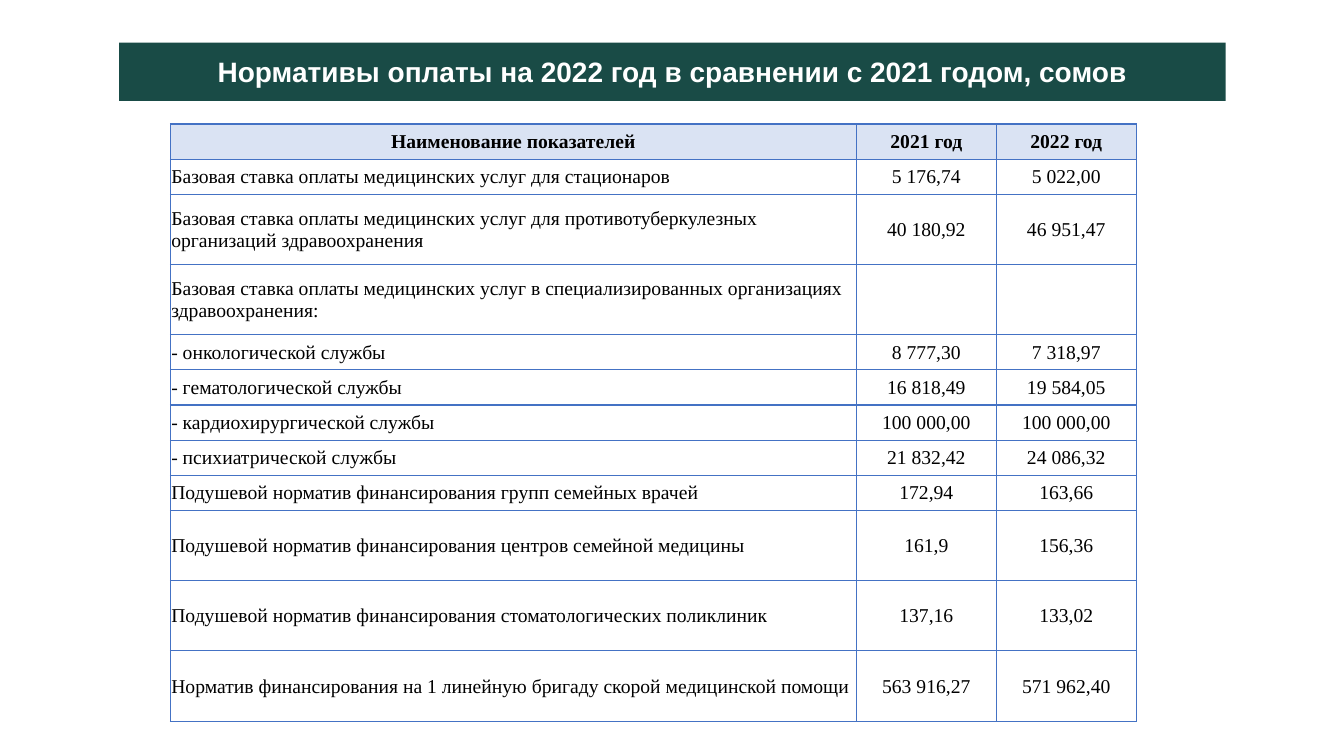
"""Build a slide comparing the 2021 and 2022 payment rates in a table."""
from lxml.etree import SubElement
from pptx import Presentation
from pptx.dml.color import RGBColor
from pptx.enum.text import MSO_ANCHOR as Anchor, MSO_AUTO_SIZE as AutoSize, PP_ALIGN as Align
from pptx.oxml.ns import qn
from pptx.util import Pt

TITLE = "Нормативы оплаты на 2022 год в сравнении с 2021 годом, сомов"
RATES = [
    ("Наименование показателей", "2021 год", "2022 год"),
    ("Базовая ставка оплаты медицинских услуг для стационаров", "5 176,74", "5 022,00"),
    ("Базовая ставка оплаты медицинских услуг для противотуберкулезных "
     "организаций здравоохранения", "40 180,92", "46 951,47"),
    ("Базовая ставка оплаты медицинских услуг в специализированных "
     "организациях здравоохранения:", "", ""),
    ("- онкологической службы", "8 777,30", "7 318,97"),
    ("- гематологической службы", "16 818,49", "19 584,05"),
    ("- кардиохирургической службы", "100 000,00", "100 000,00"),
    ("- психиатрической службы", "21 832,42", "24 086,32"),
    ("Подушевой норматив финансирования групп семейных врачей", "172,94", "163,66"),
    ("Подушевой норматив финансирования центров семейной медицины", "161,9", "156,36"),
    ("Подушевой норматив финансирования стоматологических поликлиник", "137,16", "133,02"),
    ("Норматив финансирования на 1 линейную бригаду скорой медицинской помощи",
     "563 916,27", "571 962,40"),
]
DOUBLE_ROWS = {2, 3, 9, 10, 11}
ROW_HEIGHT = 25.1
COLUMN_WIDTHS = (490, 100, 100)
TABLE_LEFT, TABLE_TOP = 121.7, 88.6

GREEN = RGBColor(0x19, 0x4B, 0x46)
PALE_BLUE = RGBColor(0xDA, 0xE3, 0xF3)
BLUE = RGBColor(0x44, 0x72, 0xC4)
WHITE = RGBColor(0xFF, 0xFF, 0xFF)
BLACK = RGBColor(0, 0, 0)


def style_font(paragraph, name, size, color, bold):
    font = paragraph.font
    font.name, font.size, font.bold = name, Pt(size), bold
    font.color.rgb = color


def add_borders(cell):
    properties = cell._tc.get_or_add_tcPr()
    for side in ("a:lnL", "a:lnR", "a:lnT", "a:lnB"):
        border = SubElement(properties, qn(side), w=str(Pt(1)))
        fill = SubElement(border, qn("a:solidFill"))
        SubElement(fill, qn("a:srgbClr"), val=str(BLUE))


def add_title(slide):
    title = slide.shapes.title
    title.left, title.top, title.width, title.height = Pt(85), Pt(30.4), Pt(790.5), Pt(41.6)
    title.fill.solid()
    title.fill.fore_color.rgb = GREEN
    frame = title.text_frame
    frame.text = TITLE
    frame.word_wrap = True
    frame.auto_size = AutoSize.NONE
    frame.vertical_anchor = Anchor.MIDDLE
    heading = frame.paragraphs[0]
    heading.alignment = Align.CENTER
    heading.line_spacing = 1.0
    heading.space_before = heading.space_after = Pt(12)
    style_font(heading, "Arial", 20, WHITE, True)


def add_rates(slide):
    heights = [ROW_HEIGHT * (2 if i in DOUBLE_ROWS else 1) for i in range(len(RATES))]
    table = slide.shapes.add_table(
        len(RATES), len(COLUMN_WIDTHS), Pt(TABLE_LEFT), Pt(TABLE_TOP),
        Pt(sum(COLUMN_WIDTHS)), Pt(sum(heights))).table
    table.horz_banding = False
    for column, width in zip(table.columns, COLUMN_WIDTHS):
        column.width = Pt(width)
    for i, (rate, height) in enumerate(zip(RATES, heights)):
        table.rows[i].height = Pt(height)
        for j, text in enumerate(rate):
            cell = table.cell(i, j)
            cell.text = text
            cell.vertical_anchor = Anchor.MIDDLE
            cell.margin_left = cell.margin_right = cell.margin_top = Pt(0.7)
            cell.margin_bottom = 0
            add_borders(cell)
            if i == 0:
                cell.fill.solid()
                cell.fill.fore_color.rgb = PALE_BLUE
            else:
                cell.fill.background()
            paragraph = cell.text_frame.paragraphs[0]
            paragraph.alignment = Align.CENTER if i == 0 or j else Align.LEFT
            style_font(paragraph, "Times New Roman", 14, BLACK, i == 0)


def main():
    deck = Presentation()
    deck.slide_width, deck.slide_height = Pt(960), Pt(540)
    slide = deck.slides.add_slide(deck.slide_layouts[5])
    add_title(slide)
    add_rates(slide)
    deck.save("out.pptx")


if __name__ == "__main__":
    main()
